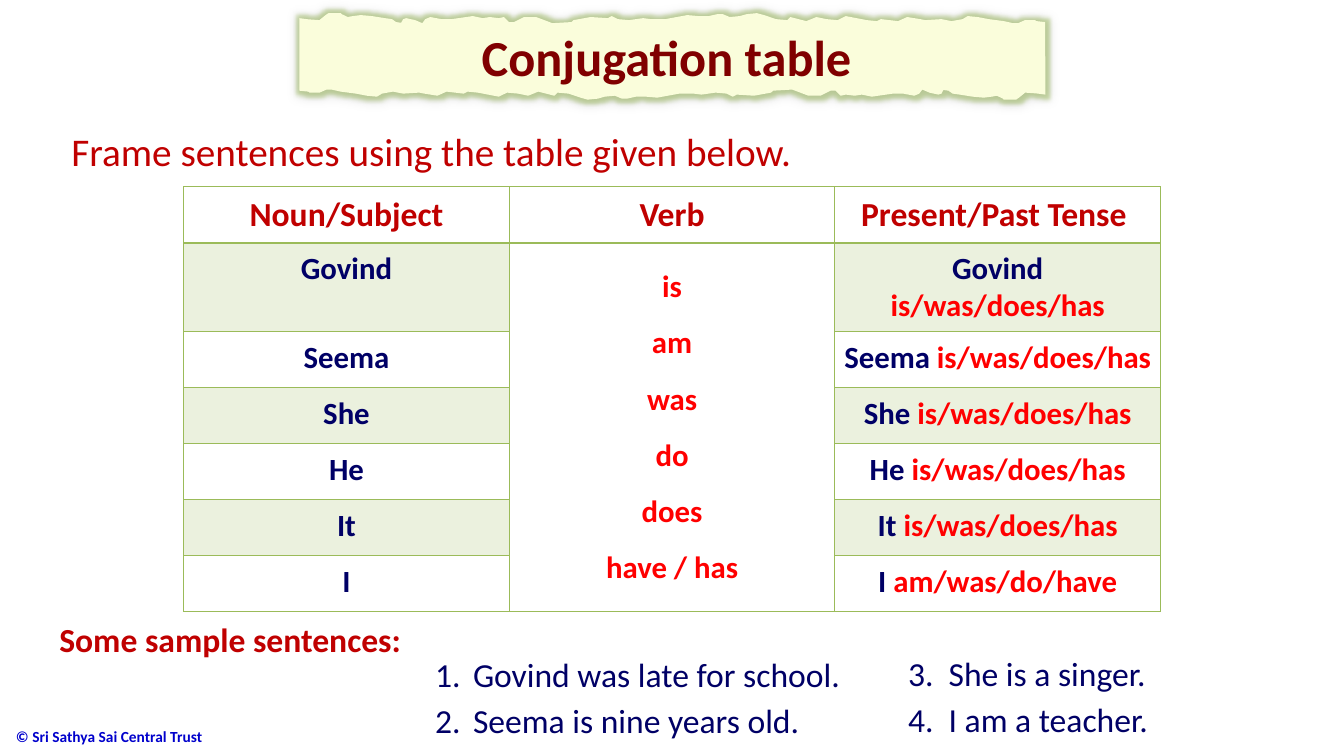
from dataclasses import dataclass

from lxml import etree
from pptx import Presentation
from pptx.dml.color import RGBColor
from pptx.enum.text import MSO_ANCHOR, PP_ALIGN
from pptx.oxml.ns import qn
from pptx.slide import Slide
from pptx.table import _Cell
from pptx.text.text import TextFrame
from pptx.util import Pt

LEFT, CENTER = PP_ALIGN.LEFT, PP_ALIGN.CENTER
TOP, MIDDLE = MSO_ANCHOR.TOP, MSO_ANCHOR.MIDDLE

WHITE = RGBColor(0xFF, 0xFF, 0xFF)
CREAM = RGBColor(0xFA, 0xFD, 0xDB)
PALE_GREEN = RGBColor(0xEB, 0xF1, 0xDE)
GREEN = RGBColor(0x9B, 0xBB, 0x59)
BLACK = RGBColor(0x00, 0x00, 0x00)
MAROON = RGBColor(0x80, 0x00, 0x00)
DARK_RED = RGBColor(0xC0, 0x00, 0x00)
RED = RGBColor(0xFF, 0x00, 0x00)
NAVY = RGBColor(0x00, 0x00, 0x66)
BLUE = RGBColor(0x00, 0x00, 0xCC)

FONT = "Calibri"
CELL_MARGIN = 5.04
TORN_SUM_X, TORN_SUM_Y = 960.5, 80.6
TORN_EDGE = [
    (213.8, 13), (220, 13.8), (228.2, 14.4), (232.6, 10.8), (234.7, 9.4), (243.4, 9.4),
    (244.1, 10.1), (248.4, 12.2), (252, 11.5), (257.8, 10.8), (265.7, 11.5), (275, 13),
    (280, 13.7), (283, 15.8), (286.6, 16.3), (288, 13.7), (290.2, 13), (296.6, 14.4),
    (301.7, 16.6), (303.8, 13.7), (307.4, 12.2), (315.4, 13.7), (322.6, 13.7), (337.7, 11.5),
    (344.9, 13), (349.9, 12.2), (356.4, 13), (360, 12.2), (363.6, 15.8), (367.2, 15.8),
    (374.4, 12.2), (383, 12.2), (394.6, 16.6), (408.2, 15.8), (409.7, 14.4), (421.9, 12.2),
    (434.2, 13), (437, 11.5), (441.4, 13.7), (449.3, 14.4), (459.4, 13), (465.1, 13.7),
    (475.2, 13.7), (491, 10.8), (499, 11.5), (506.2, 11.5), (512.6, 10.1), (516.2, 10.1),
    (521.3, 12.2), (528.5, 11.5), (533.5, 10.1), (540.7, 9.4), (545.8, 10.8), (554.4, 13.7),
    (562.3, 14.4), (564.5, 12.2), (576, 15.1), (583.2, 12.2), (590.4, 13.7), (598.3, 14.4),
    (604.1, 11.5), (607.7, 12.2), (619.2, 14.4), (626.4, 15.1), (629.3, 13.7), (641.5, 15.1),
    (648, 12.2), (657.4, 13.7), (661, 14.4), (672.5, 13.7), (679.7, 15.1), (687.6, 13.7),
    (691.2, 11.5), (698.4, 12.2), (706.3, 13.7), (717.1, 15.1), (723.6, 16.6), (727.2, 16.6),
    (732.2, 14.4), (739.4, 14.4), (740.2, 15.1), (746.6, 15.8),
]

Run = tuple[str, RGBColor]


@dataclass(frozen=True)
class Note:
    left: float
    top: float
    width: float
    height: float
    lines: tuple[str, ...]
    size: float
    color: RGBColor
    bold: bool = False
    spacing: float = 1.14
    anchor: MSO_ANCHOR = TOP
    first_number: int = 0
    hanging: float = 0


@dataclass(frozen=True)
class Subject:
    name: str
    verbs: str = "is/was/does/has"
    height: float = 40


NOTES = [
    Note(4.3, 512, 250, 28, ("© Sri Sathya Sai Central Trust",), 11, BLUE, True, 1, MIDDLE),
    Note(35.3, 434.2, 274.3, 38.9, ("Some sample sentences:",), 24, DARK_RED, True),
    Note(43.9, 82.8, 549.4, 43.9, ("Frame sentences using the table given below.",), 28, DARK_RED),
    Note(303.8, 459.4, 342.7, 71.3, ("Govind was late for school.", "Seema is nine years old."),
         24, NAVY, first_number=1, hanging=27),
    Note(641.5, 459, 209.5, 72, ("She is a singer.", "I am a teacher."),
         24, NAVY, first_number=3, hanging=29),
]
HEADINGS = ["Noun/Subject", "Verb", "Present/Past Tense "]
VERBS = ["is", "am", "was", "do", "does", "have / has"]
SUBJECTS = [
    Subject("Govind", height=62.6),
    Subject("Seema"),
    Subject("She"),
    Subject("He"),
    Subject("It"),
    Subject("I", "am/was/do/have"),
]


def write(frame: TextFrame, lines: list[list[Run]], *, size: float, bold: bool = False,
          align: PP_ALIGN = LEFT, spacing: float = 1, first_number: int = 0,
          hanging: float = 0) -> None:
    frame.word_wrap = True
    for index, runs in enumerate(lines):
        paragraph = frame.add_paragraph() if index else frame.paragraphs[0]
        if first_number:
            properties = paragraph._p.get_or_add_pPr()
            properties.set("marL", str(Pt(hanging)))
            properties.set("indent", str(-Pt(hanging)))
            etree.SubElement(properties, qn("a:buFont"), typeface="+mj-lt")
            etree.SubElement(properties, qn("a:buAutoNum"), type="arabicPeriod",
                             startAt=str(first_number))
        paragraph.alignment = align
        paragraph.line_spacing = spacing
        for text, color in runs:
            run = paragraph.add_run()
            run.text = text
            run.font.name = FONT
            run.font.size = Pt(size)
            run.font.bold = bold
            run.font.color.rgb = color


def add_color(parent: etree._Element, color: RGBColor, opacity: int = 100) -> None:
    shade = etree.SubElement(parent, qn("a:srgbClr"), val=str(color))
    etree.SubElement(shade, qn("a:alpha"), val=str(opacity * 1000))


def add_banner(slide: Slide) -> None:
    outline = TORN_EDGE + [(TORN_SUM_X - x, TORN_SUM_Y - y) for x, y in TORN_EDGE]
    points = [(Pt(x), Pt(y)) for x, y in outline]
    builder = slide.shapes.build_freeform(*points[0])
    builder.add_line_segments(points[1:])
    banner = builder.convert_to_shape()
    banner.fill.solid()
    banner.fill.fore_color.rgb = CREAM
    banner.line.fill.background()
    banner.shadow.inherit = False
    effects = banner._element.spPr.find(qn("a:effectLst"))
    add_color(etree.SubElement(effects, qn("a:glow"), rad=str(Pt(5))), GREEN, 50)
    add_color(etree.SubElement(effects, qn("a:outerShdw"), blurRad=str(Pt(6))), BLACK, 20)
    banner.text_frame.vertical_anchor = MIDDLE
    write(banner.text_frame, [[("Conjugation table ", MAROON)]], size=36, bold=True, align=CENTER)


def add_note(slide: Slide, note: Note) -> None:
    box = slide.shapes.add_textbox(Pt(note.left), Pt(note.top), Pt(note.width), Pt(note.height))
    box.text_frame.vertical_anchor = note.anchor
    write(box.text_frame, [[(line, note.color)] for line in note.lines], size=note.size,
          bold=note.bold, spacing=note.spacing, first_number=note.first_number,
          hanging=note.hanging)


def format_cell(cell: _Cell, fill: RGBColor, top: float, bottom: float) -> None:
    cell.margin_left = cell.margin_right = Pt(CELL_MARGIN)
    cell.margin_top = cell.margin_bottom = Pt(CELL_MARGIN)
    properties = cell._tc.get_or_add_tcPr()
    for side, width in (("L", 1), ("R", 1), ("T", top), ("B", bottom)):
        border = etree.SubElement(properties, qn(f"a:ln{side}"), w=str(Pt(width)))
        add_color(etree.SubElement(border, qn("a:solidFill")), GREEN)
    cell.fill.solid()
    cell.fill.fore_color.rgb = fill


def add_conjugations(slide: Slide) -> None:
    row_count = len(SUBJECTS) + 1
    table = slide.shapes.add_table(row_count, len(HEADINGS), Pt(131.2), Pt(133.4),
                                   Pt(697.8), Pt(302.6)).table
    table.horz_banding = table.first_row = False
    for column in table.columns:
        column.width = Pt(232.6)
    for index, row in enumerate(table.rows):
        row.height = Pt(SUBJECTS[index - 1].height if index else 40)
        for position, cell in enumerate(row.cells):
            banded = index % 2 == 1 and position != 1
            format_cell(cell, PALE_GREEN if banded else WHITE,
                        2 if index == 1 else 1, 2 if index == 0 else 1)
    for position, heading in enumerate(HEADINGS):
        cell = table.cell(0, position)
        cell.vertical_anchor = MIDDLE
        write(cell.text_frame, [[(heading, DARK_RED)]], size=24, bold=True, align=CENTER)
    verb_cell = table.cell(1, 1)
    verb_cell.merge(table.cell(row_count - 1, 1))
    write(verb_cell.text_frame, [[(verb, RED)] for verb in VERBS], size=22, bold=True,
          align=CENTER, spacing=1.5)
    for index, subject in enumerate(SUBJECTS, 1):
        phrase = [(f"{subject.name} ", NAVY), (subject.verbs, RED)]
        for position, runs in ((0, [(subject.name, NAVY)]), (2, phrase)):
            write(table.cell(index, position).text_frame, [runs], size=22, bold=True, align=CENTER)


def main() -> None:
    presentation = Presentation()
    presentation.slide_width, presentation.slide_height = Pt(960), Pt(540)
    slide = presentation.slides.add_slide(presentation.slide_layouts[6])
    add_banner(slide)
    add_conjugations(slide)
    for note in NOTES:
        add_note(slide, note)
    presentation.save("out.pptx")


if __name__ == "__main__":
    main()
